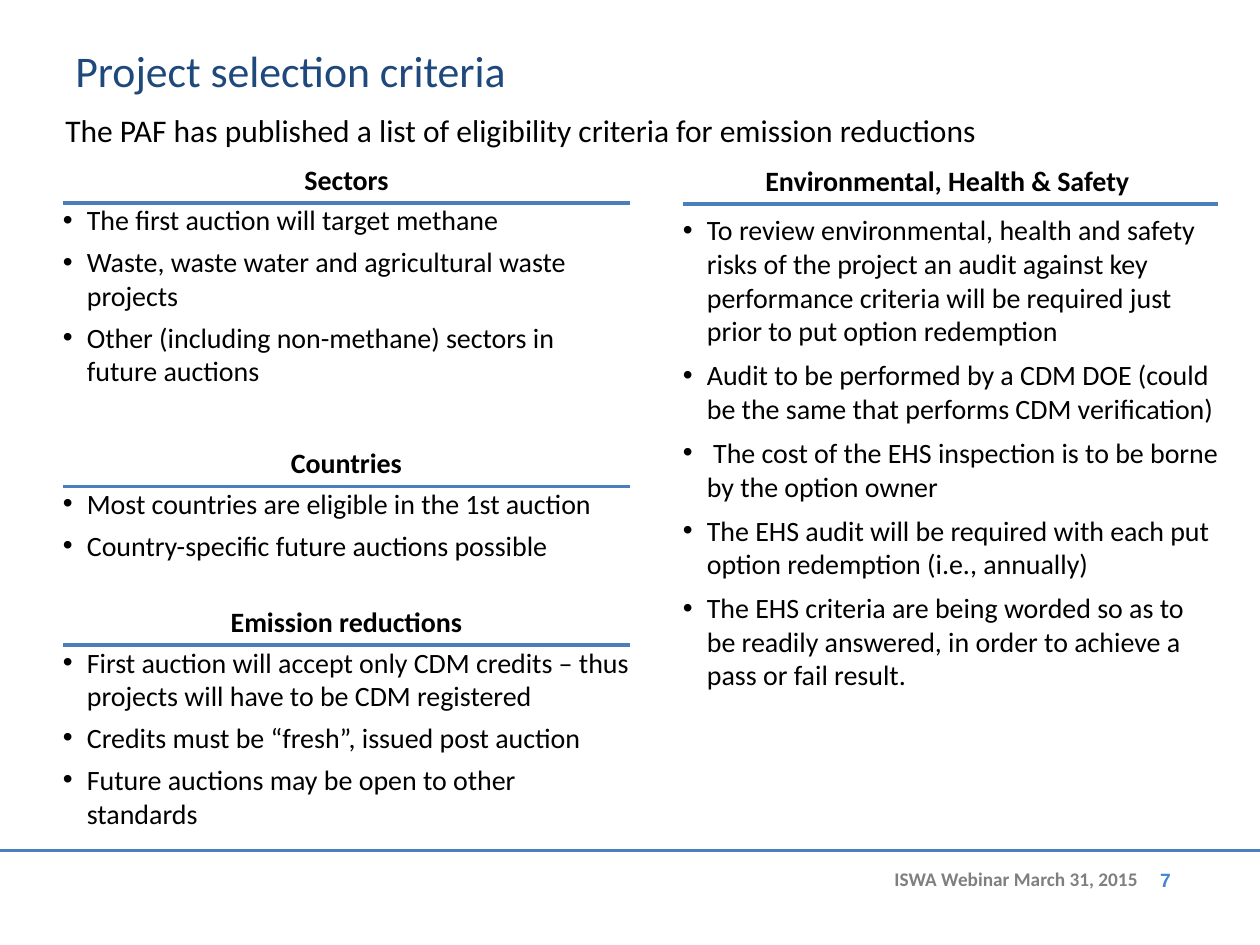
from lxml import etree
from pptx import Presentation
from pptx.dml.color import RGBColor
from pptx.enum.shapes import MSO_CONNECTOR
from pptx.enum.text import MSO_ANCHOR, PP_ALIGN
from pptx.oxml.ns import qn
from pptx.util import Inches, Pt

BLACK = RGBColor(0x00, 0x00, 0x00)
NAVY = RGBColor(0x1F, 0x49, 0x7D)
RULE_BLUE = RGBColor(0x4B, 0x7E, 0xBC)
PAGE_BLUE = RGBColor(0x47, 0x85, 0xD1)
GREY = RGBColor(0x7F, 0x7F, 0x7F)
LEFT, CENTER, RIGHT = PP_ALIGN.LEFT, PP_ALIGN.CENTER, PP_ALIGN.RIGHT
TOP, MIDDLE = MSO_ANCHOR.TOP, MSO_ANCHOR.MIDDLE
STRAIGHT = MSO_CONNECTOR.STRAIGHT

SLIDE_W, SLIDE_H = 10, 7.5
HEADING_H = 0.38
INDENT = 0.19
FOOTER_RULE_Y = 6.75

# Single lines: text, (left, top, width, height), size, colour, bold, alignment, font
LINES = [
    ("Project selection criteria", (0.5, 0.3, 9.25, 0.52), 25, NAVY, False, LEFT, "Calibri"),
    ("The PAF has published a list of eligibility criteria for emission reductions",
     (0.42, 0.83, 9.25, 0.4), 18, BLACK, False, LEFT, "Calibri"),
    ("ISWA Webinar March 31, 2015", (3.42, 6.83, 5.71, 0.29), 11, GREY, True, RIGHT, "Calibri"),
    ("7", (9.11, 6.84, 0.44, 0.35), 11, PAGE_BLUE, True, LEFT, "Arial"),
]

# Columns: left, width, inset above the bullets, gap after a bullet (pt),
# sections as (heading, rule y, body height, bullets)
COLUMNS = [
    (0.5, 4.5, 0, 4.8, [
        ("Sectors", 1.61, 2, [
            "The first auction will target methane",
            "Waste, waste water and agricultural waste projects",
            "Other (including non-methane) sectors in future auctions",
        ]),
        ("Countries", 3.86, 1.73, [
            "Most countries are eligible in the 1st auction",
            "Country-specific future auctions possible",
        ]),
        ("Emission reductions", 5.12, 1.73, [
            "First auction will accept only CDM credits – thus projects will have to be CDM registered",
            "Credits must be “fresh”, issued post auction",
            "Future auctions may be open to other standards",
        ]),
    ]),
    (5.42, 4.25, 0.07, 6, [
        ("Environmental, Health & Safety ", 1.62, 2, [
            "To review environmental, health and safety risks of the project an audit against key "
            "performance criteria will be required just prior to put option redemption",
            "Audit to be performed by a CDM DOE (could be the same that performs CDM verification)",
            " The cost of the EHS inspection is to be borne by the option owner",
            "The EHS audit will be required with each put option redemption (i.e., annually)",
            "The EHS criteria are being worded so as to be readily answered, in order to achieve a "
            "pass or fail result.",
        ]),
    ]),
]


def add_frame(slide, area, anchor=TOP):
    frame = slide.shapes.add_textbox(*map(Inches, area)).text_frame
    frame.word_wrap = True
    frame.vertical_anchor = anchor
    return frame


def add_run(paragraph, text, size, color=BLACK, bold=False, font="Calibri"):
    run = paragraph.add_run()
    run.text = text
    run.font.size = Pt(size)
    run.font.name = font
    run.font.bold = bold
    run.font.color.rgb = color


def add_line_of_text(slide, text, area, size, color, bold, align, font, anchor=TOP):
    paragraph = add_frame(slide, area, anchor).paragraphs[0]
    paragraph.alignment = align
    add_run(paragraph, text, size, color, bold, font)


def add_rule(slide, left, y, width, weight):
    rule = slide.shapes.add_connector(
        STRAIGHT, Inches(left), Inches(y), Inches(left + width), Inches(y))
    rule.line.color.rgb = RULE_BLUE
    rule.line.width = Pt(weight)
    etree.SubElement(rule._element.spPr, qn("a:effectLst"))


def add_bullets(slide, area, bullets, top_inset, gap):
    frame = add_frame(slide, area)
    frame.margin_left = frame.margin_right = frame.margin_bottom = 0
    frame.margin_top = Inches(top_inset)
    for i, text in enumerate(bullets):
        paragraph = frame.add_paragraph() if i else frame.paragraphs[0]
        paragraph.space_after = Pt(gap)
        props = paragraph._p.get_or_add_pPr()
        props.set("marL", str(Inches(INDENT)))
        props.set("indent", str(-Inches(INDENT)))
        etree.SubElement(props, qn("a:buFont")).set("typeface", "Arial")
        etree.SubElement(props, qn("a:buChar")).set("char", "•")
        add_run(paragraph, text, 16)


def main():
    prs = Presentation()
    prs.slide_width, prs.slide_height = Inches(SLIDE_W), Inches(SLIDE_H)
    slide = prs.slides.add_slide(prs.slide_layouts[6])

    # Title, subtitle and footer
    add_rule(slide, 0, FOOTER_RULE_Y, SLIDE_W, 1.5)
    for line in LINES:
        add_line_of_text(slide, *line)

    # Criteria sections: heading above a rule, bullets below it
    for left, width, top_inset, gap, sections in COLUMNS:
        for heading, rule_y, body_h, bullets in sections:
            add_bullets(slide, (left, rule_y, width, body_h), bullets, top_inset, gap)
            add_line_of_text(slide, heading, (left, rule_y - HEADING_H, width, HEADING_H),
                             16, BLACK, True, CENTER, "Calibri", MIDDLE)
            add_rule(slide, left, rule_y, width, 2)

    prs.save("out.pptx")


if __name__ == "__main__":
    main()
